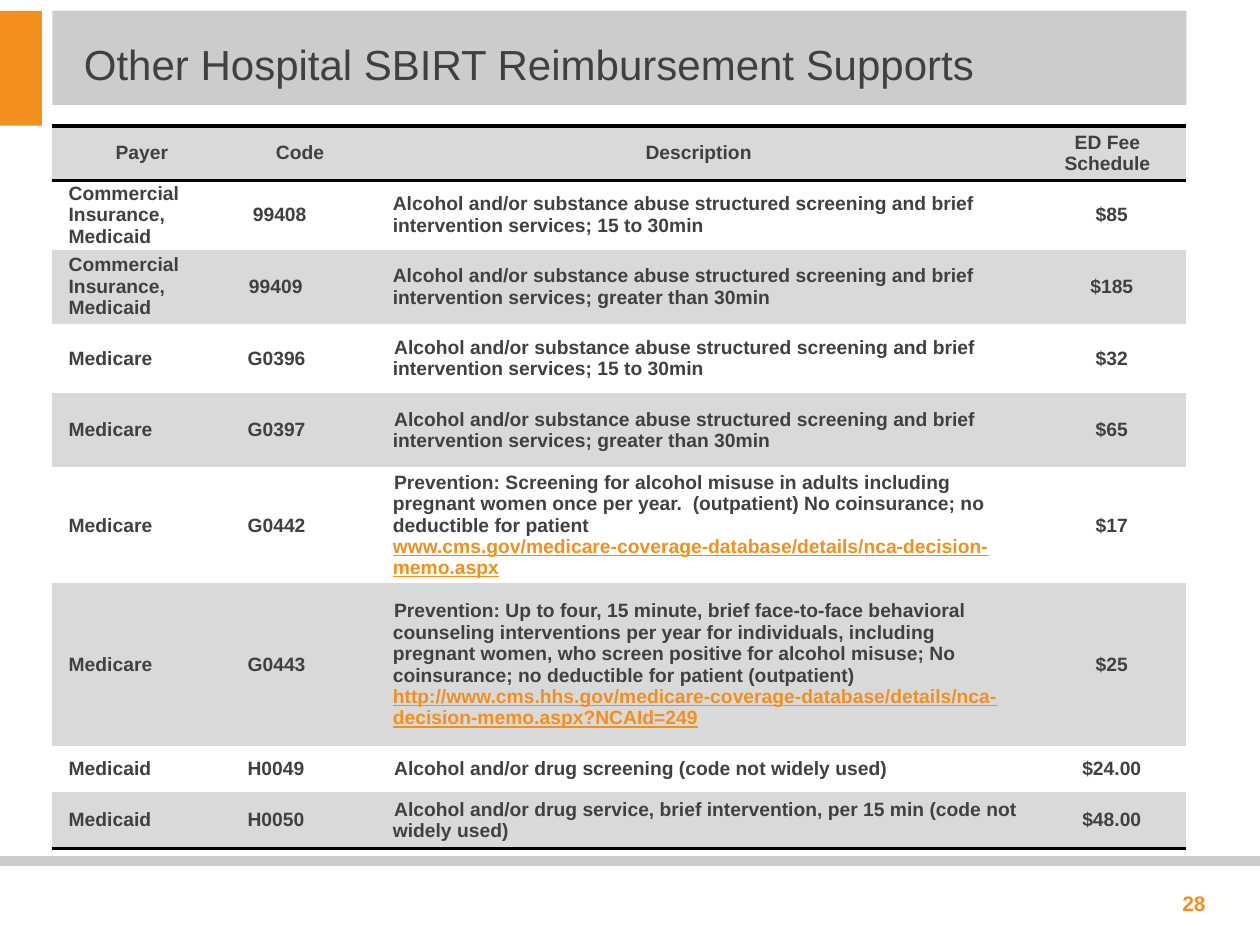
from lxml.etree import SubElement
from pptx import Presentation
from pptx.dml.color import RGBColor
from pptx.enum.shapes import MSO_CONNECTOR, MSO_SHAPE
from pptx.enum.text import MSO_ANCHOR, PP_ALIGN
from pptx.oxml.ns import qn
from pptx.util import Pt

COLORS = {"orange": "F3901D", "gray": "CCCCCC", "band": "D9D9D9",
          "white": "FFFFFF", "text": "404040", "rule": "000000"}
FONTS = {
    "title": {"name": "Arial", "size": Pt(24), "bold": False},
    "cell": {"name": "Arial", "size": Pt(11), "bold": True},
    "link": {"name": "Arial", "size": Pt(11), "bold": True, "underline": True},
    "number": {"name": "Arial", "size": Pt(12), "bold": True},
}
CELL_FORMAT = {"vertical_anchor": MSO_ANCHOR.MIDDLE, "margin_left": Pt(5),
               "margin_right": Pt(5), "margin_top": 0, "margin_bottom": 0}

# Table content: payer, code, description, link, fee
HEADER = ("Payer", "Code", "Description", "", "ED Fee Schedule")
SCREENING = "Alcohol and/or substance abuse structured screening and brief intervention services; "
BRIEF = SCREENING + "15 to 30min"
LONG = SCREENING + "greater than 30min"
PRIVATE = "Commercial Insurance, Medicaid"
ROWS = [
    (PRIVATE, "99408", BRIEF, "", "$85"),
    (PRIVATE, "99409", LONG, "", "$185"),
    ("Medicare", "G0396", BRIEF, "", "$32"),
    ("Medicare", "G0397", LONG, "", "$65"),
    ("Medicare", "G0442",
     "Prevention: Screening for alcohol misuse in adults including pregnant women "
     "once per year.  (outpatient) No coinsurance; no deductible for patient ",
     "www.cms.gov/medicare-coverage-database/details/nca-decision-memo.aspx", "$17"),
    ("Medicare", "G0443",
     "Prevention: Up to four, 15 minute, brief face-to-face behavioral counseling "
     "interventions per year for individuals, including pregnant women, who screen "
     "positive for alcohol misuse; No coinsurance; no deductible for patient (outpatient) ",
     "http://www.cms.hhs.gov/medicare-coverage-database/details/nca-decision-memo.aspx?NCAId=249",
     "$25"),
    ("Medicaid", "H0049", "Alcohol and/or drug screening (code not widely used)", "", "$24.00"),
    ("Medicaid", "H0050",
     "Alcohol and/or drug service, brief intervention, per 15 min (code not widely used)",
     "", "$48.00"),
]
COL_WIDTHS = [102.25, 78.5, 377, 90.25]
ROW_HEIGHTS = [31, 39.75, 42.25, 39.75, 42.25, 66.5, 92.75, 26.25, 32.5]
INDENTS = [4.25, 4.25, 8.75, 4.25]
FIRST_LINE = {(1, 1): 3, (2, 1): 0.75}  # extra first-line indent of the numeric codes


def rgb(name):
    return RGBColor.from_string(COLORS[name])


def set_format(obj, values):
    for key, value in values.items():
        setattr(obj, key, value)


def add_run(p, text, font, color):
    r = p.add_run()
    r.text = text
    set_format(r.font, FONTS[font])
    r.font.color.rgb = rgb(color)


def add_rect(s, box, color):
    sp = s.shapes.add_shape(MSO_SHAPE.RECTANGLE, *map(Pt, box))
    sp.shadow.inherit = False
    sp.fill.solid()
    sp.fill.fore_color.rgb = rgb(color)
    sp.line.fill.background()
    return sp


def add_rule(s, y, width, color, weight):
    line = s.shapes.add_connector(MSO_CONNECTOR.STRAIGHT, 0, Pt(y), Pt(width), Pt(y))
    line.line.color.rgb = rgb(color)
    line.line.width = Pt(weight)
    SubElement(line._element.spPr, qn("a:effectLst"))


def add_title(s, box, text):
    sp = add_rect(s, box, "gray")
    tf = sp.text_frame
    set_format(tf, {"word_wrap": True, "vertical_anchor": MSO_ANCHOR.MIDDLE,
                    "margin_left": Pt(18)})
    p = tf.paragraphs[0]
    set_format(p, {"alignment": PP_ALIGN.LEFT, "line_spacing": Pt(36)})
    add_run(p, text, "title", "text")


def add_number(s, box, text):
    tf = s.shapes.add_textbox(*map(Pt, box)).text_frame
    set_format(tf, {"word_wrap": True, "vertical_anchor": MSO_ANCHOR.MIDDLE})
    p = tf.paragraphs[0]
    p.alignment = PP_ALIGN.RIGHT
    add_run(p, text, "number", "orange")


def set_borders(cell, ruled_sides):
    tc_pr = cell._tc.get_or_add_tcPr()
    for side in "LRTB":
        ln = SubElement(tc_pr, qn(f"a:ln{side}"))
        if side in ruled_sides:
            ln.set("w", str(Pt(2.25)))
            fill = SubElement(ln, qn("a:solidFill"))
            SubElement(fill, qn("a:srgbClr")).set("val", COLORS["rule"])
        else:
            ln.set("w", "0")
            SubElement(ln, qn("a:noFill"))


def fill_cell(cell, row, col, text, link):
    set_format(cell, CELL_FORMAT)
    set_borders(cell, {0: "TB", 1: "T", len(ROWS): "B"}.get(row, ""))
    cell.fill.solid()
    cell.fill.fore_color.rgb = rgb("white" if row % 2 else "band")
    p = cell.text_frame.paragraphs[0]
    p.alignment = PP_ALIGN.CENTER if row == 0 or col == 3 else PP_ALIGN.LEFT
    if row:
        first = 0.75 if col == 3 or (col == 2 and row > 2) else 0
        p_pr = p._p.get_or_add_pPr()
        p_pr.set("marL", str(Pt(INDENTS[col])))
        p_pr.set("indent", str(Pt(FIRST_LINE.get((row, col), first))))
    add_run(p, text, "cell", "text")
    if link:
        add_run(p, link, "link", "orange")


def add_fee_table(s, left, top):
    frame = s.shapes.add_table(len(ROW_HEIGHTS), len(COL_WIDTHS), Pt(left), Pt(top),
                               Pt(sum(COL_WIDTHS)), Pt(sum(ROW_HEIGHTS)))
    table = frame.table
    for column, width in zip(table.columns, COL_WIDTHS):
        column.width = Pt(width)
    for row, height in zip(table.rows, ROW_HEIGHTS):
        row.height = Pt(height)
    for i, (payer, code, description, link, fee) in enumerate([HEADER] + ROWS):
        for j, text in enumerate((payer, code, description, fee)):
            fill_cell(table.cell(i, j), i, j, text, link if j == 2 else "")


def main():
    prs = Presentation()
    prs.slide_width, prs.slide_height = Pt(720), Pt(540)
    s = prs.slides.add_slide(prs.slide_layouts[6])

    # Side accent and footer rule
    add_rect(s, (0, 6.25, 24, 65.5), "orange")
    add_rule(s, 492, 720, "gray", 6)

    # Fee table, page number and title
    add_fee_table(s, 30, 72)
    add_number(s, (648, 504, 48, 24), "28")
    add_title(s, (30, 6, 648, 54), "Other Hospital SBIRT Reimbursement Supports")

    prs.save("out.pptx")


if __name__ == "__main__":
    main()
